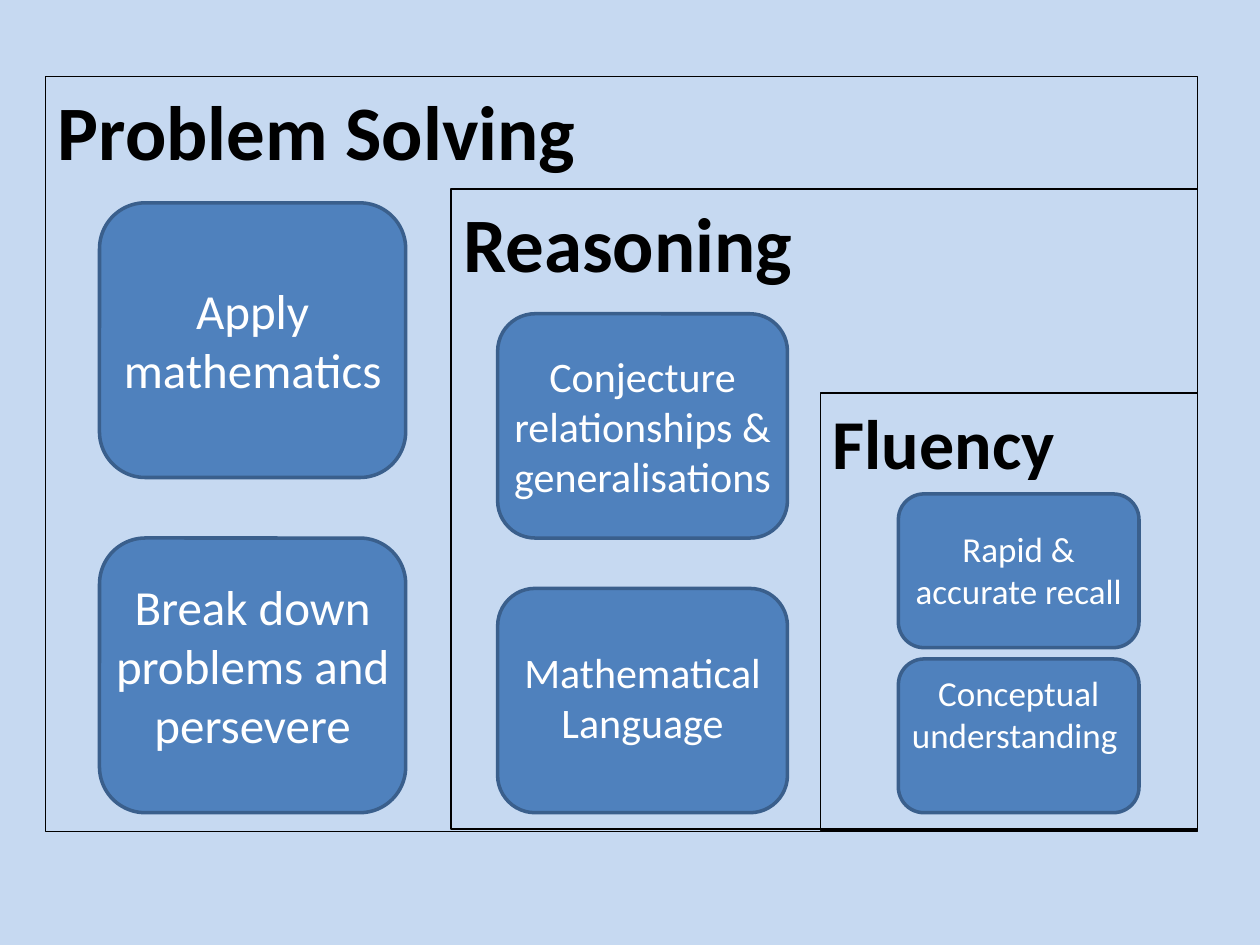
from dataclasses import dataclass

from pptx import Presentation
from pptx import util as u
from pptx.dml.color import RGBColor
from pptx.enum import shapes, text

# Grid of 100 columns by 75 rows on a 10 x 7.5 inch slide
COLUMNS, ROWS = 100, 75
CELL = u.Inches(0.1)
RIGHT_EDGE = 95.05  # shared by all nested frames
CARDS_BOTTOM = 64.5  # shared by the lower card of every stage


@dataclass(frozen=True)
class Theme:
    font: str = "Calibri"
    background: RGBColor = RGBColor(0xC6, 0xD9, 0xF1)
    heading: RGBColor = RGBColor(0, 0, 0)
    card: RGBColor = RGBColor(0x4F, 0x81, 0xBD)
    card_edge: RGBColor = RGBColor(0x3A, 0x5F, 0x8C)
    caption: RGBColor = RGBColor(0xFF, 0xFF, 0xFF)
    frame_line: float = 0.75
    card_line: float = 2


@dataclass(frozen=True)
class Card:
    caption: str
    top: float
    caption_top: float
    lines: int


@dataclass(frozen=True)
class Stage:
    heading: str
    heading_size: int
    left: float
    top: float
    bottom: float
    card_left: float
    card_width: float
    card_height: float
    caption_size: int
    cards: tuple[Card, ...]


THEME = Theme()


def lower(height: float) -> float:
    """Top row of a card that stands on the common bottom line."""
    return CARDS_BOTTOM - height


STAGES = (
    Stage("Problem Solving", 44, 3.6, 6.1, 66, 7.9, 24.3, 21.8, 28, (
        Card("Apply mathematics", 16.1, 21.8, 2),
        Card("Break down problems and persevere", lower(21.8), 45.3, 3))),
    Stage("Reasoning", 44, 35.8, 15, 65.8, 39.5, 23, 17.8, 24, (
        Card("Conjecture relationships & generalisations", 24.9, 27.3, 3),
        Card("Mathematical Language", lower(17.8), 50.8, 2))),
    Stage("Fluency", 40, 65.1, 31.2, 65.9, 71.3, 19.1, 12.2, 20, (
        Card("Rapid & accurate recall", 39.2, 41.4, 2),
        Card("Conceptual understanding ", lower(12.2), 52.8, 2))),
)


def grid(*cells: float) -> list[int]:
    return [round(cell * CELL) for cell in cells]


def write(shape, words: str, size: int, color: RGBColor, align, bold: bool) -> None:
    frame = shape.text_frame
    frame.word_wrap = True
    frame.auto_size = text.MSO_AUTO_SIZE.NONE
    frame.vertical_anchor = text.MSO_ANCHOR.TOP
    frame.text = words
    paragraph = frame.paragraphs[0]
    paragraph.alignment = align
    font = paragraph.font
    font.name, font.size, font.bold = THEME.font, u.Pt(size), bold
    font.color.rgb = color


def outline(shape, color: RGBColor, width: float) -> None:
    shape.line.color.rgb = color
    shape.line.width = u.Pt(width)


def draw_frame(slide, stage: Stage, title=None) -> None:
    """Draw a stage frame; the outermost one is the slide's title."""
    box = grid(stage.left, stage.top, RIGHT_EDGE - stage.left, stage.bottom - stage.top)
    if title is None:
        frame = slide.shapes.add_shape(shapes.MSO_SHAPE.RECTANGLE, *box)
        frame.shadow.inherit = False
    else:
        frame = title
        frame.left, frame.top, frame.width, frame.height = box
    frame.fill.background()
    outline(frame, THEME.heading, THEME.frame_line)
    write(frame, stage.heading, stage.heading_size, THEME.heading,
          text.PP_ALIGN.LEFT, True)


def draw_card(slide, stage: Stage, card: Card) -> None:
    body = slide.shapes.add_shape(
        shapes.MSO_SHAPE.ROUNDED_RECTANGLE,
        *grid(stage.card_left, card.top, stage.card_width, stage.card_height))
    body.shadow.inherit = False
    body.fill.solid()
    body.fill.fore_color.rgb = THEME.card
    outline(body, THEME.card_edge, THEME.card_line)

    # Caption height: lines at 1.2 times the type size, plus insets
    caption_height = card.lines * stage.caption_size / 6 + 1
    caption = slide.shapes.add_textbox(
        *grid(stage.card_left, card.caption_top, stage.card_width, caption_height))
    write(caption, card.caption, stage.caption_size, THEME.caption,
          text.PP_ALIGN.CENTER, False)


def main() -> None:
    deck = Presentation()
    deck.slide_width, deck.slide_height = grid(COLUMNS, ROWS)
    slide = deck.slides.add_slide(deck.slide_layouts.get_by_name("Title Only"))
    slide.background.fill.solid()
    slide.background.fill.fore_color.rgb = THEME.background

    # Nested stages, from the outside in
    for index, stage in enumerate(STAGES):
        draw_frame(slide, stage, slide.shapes.title if index == 0 else None)
        for card in stage.cards:
            draw_card(slide, stage, card)

    deck.save("out.pptx")


if __name__ == "__main__":
    main()
